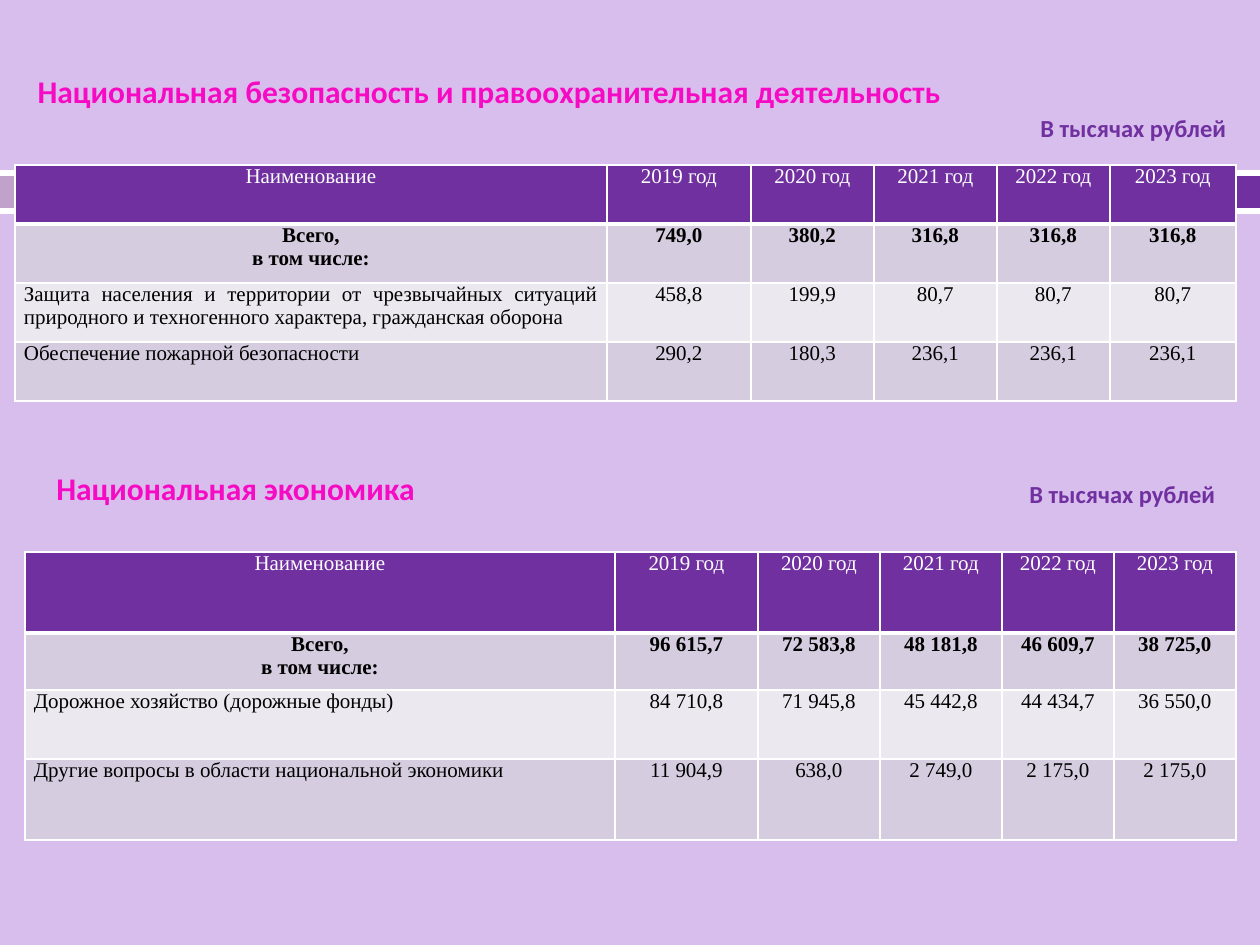
from lxml.etree import SubElement
from pptx import Presentation
from pptx.dml.color import RGBColor
from pptx.enum.shapes import MSO_SHAPE
from pptx.enum.text import MSO_ANCHOR, PP_ALIGN
from pptx.oxml.ns import qn
from pptx.util import Pt

SCALE = 914400 / 126
COLORS = {
    "background": "D8BEEC", "white": "FFFFFF", "black": "000000", "lilac": "C0A2CA",
    "purple": "7030A0", "pink": "F60AC3", "dark_band": "D5CDDF", "light_band": "EBE8F0",
}
BANDS = [
    ((0, 170, 1260, 44), "white"),
    ((0, 176, 73, 32), "lilac"),
    ((82, 176, 1178, 32), "purple"),
]
HEADER = ["Наименование"] + [f"{year} год" for year in range(2019, 2024)]
TOTAL = "Всего,\nв том числе:"
SECURITY = [
    HEADER,
    [TOTAL, "749,0", "380,2", "316,8", "316,8", "316,8"],
    ["Защита населения и территории от чрезвычайных ситуаций природного и техногенного "
     "характера, гражданская оборона", "458,8", "199,9", "80,7", "80,7", "80,7"],
    ["Обеспечение пожарной безопасности", "290,2", "180,3", "236,1", "236,1", "236,1"],
]
ECONOMY = [
    HEADER,
    [TOTAL, "96 615,7", "72 583,8", "48 181,8", "46 609,7", "38 725,0"],
    ["Дорожное хозяйство (дорожные фонды)",
     "84 710,8", "71 945,8", "45 442,8", "44 434,7", "36 550,0"],
    ["Другие вопросы в области национальной экономики",
     "11 904,9", "638,0", "2 749,0", "2 175,0", "2 175,0"],
]
TABLES = [
    (SECURITY, (15, 165), [592, 144, 123, 123, 113, 126], [59, 59, 59, 59]),
    (ECONOMY, (25, 552), [590, 143, 122, 122, 112, 122], [81, 57, 69, 81]),
]
TITLE = ("Национальная безопасность и правоохранительная деятельность", (25, 66, 936, 50))
SUBTITLE = ("Национальная экономика", (44, 463, 388, 50))
UNITS = "В тысячах рублей"
UNIT_BOXES = [(1017, 473, 228, 59), (1028, 107, 228, 59)]
HEADING_FONT = {"name": "Calibri", "size": Pt(18), "bold": True}
UNIT_FONT = {"name": "Calibri", "size": Pt(14), "bold": True}
TABLE_FONT = {"name": "Times New Roman", "size": Pt(12)}
CELL_FORMAT = {"margin_left": 9, "margin_right": 9, "margin_top": 0, "margin_bottom": 0}


def px(value):
    return int(value * SCALE)


def rgb(name):
    return RGBColor.from_string(COLORS[name])


def set_font(paragraph, values, color):
    font = paragraph.runs[0].font
    for name, value in values.items():
        setattr(font, name, value)
    font.color.rgb = rgb(color)


def write_text(shape, text, values, color, wrap):
    frame = shape.text_frame
    frame.text = text
    frame.word_wrap = wrap
    frame.vertical_anchor = MSO_ANCHOR.TOP
    frame.paragraphs[0].alignment = PP_ALIGN.LEFT
    set_font(frame.paragraphs[0], values, color)


def set_borders(cell, widths):
    properties = cell._tc.get_or_add_tcPr()
    for position, (side, width) in enumerate(widths.items()):
        line = properties.makeelement(qn(f"a:ln{side}"), {"w": str(Pt(width))})
        fill = SubElement(line, qn("a:solidFill"))
        SubElement(fill, qn("a:srgbClr"), val=COLORS["white"])
        properties.insert(position, line)


def fill_cell(cell, text, row, column):
    for name, value in CELL_FORMAT.items():
        setattr(cell, name, px(value))
    cell.vertical_anchor = MSO_ANCHOR.TOP
    cell.fill.solid()
    cell.fill.fore_color.rgb = rgb(["purple", "dark_band", "light_band", "dark_band"][row])
    set_borders(cell, {"L": 1, "R": 1, "T": 1, "B": 1 if row else 3})
    cell.text = text
    for paragraph in cell.text_frame.paragraphs:
        paragraph.alignment = PP_ALIGN.JUSTIFY if row > 1 and column == 0 else PP_ALIGN.CENTER
        set_font(paragraph, TABLE_FONT | {"bold": row == 1}, "black" if row else "white")


def add_budget_table(slide, rows, origin, widths, heights):
    box = (*origin, sum(widths), sum(heights))
    table = slide.shapes.add_table(len(rows), len(widths), *map(px, box)).table
    table.first_row = table.horz_banding = False
    for column, width in zip(table.columns, widths):
        column.width = px(width)
    for row, height in zip(table.rows, heights):
        row.height = px(height)
    for row, texts in enumerate(rows):
        for column, text in enumerate(texts):
            fill_cell(table.cell(row, column), text, row, column)


def main():
    presentation = Presentation()
    presentation.slide_width, presentation.slide_height = px(1260), px(945)
    slide = presentation.slides.add_slide(presentation.slide_layouts[5])
    slide.background.fill.solid()
    slide.background.fill.fore_color.rgb = rgb("background")

    for box, color in BANDS:
        shape = slide.shapes.add_shape(MSO_SHAPE.RECTANGLE, *map(px, box))
        shape.shadow.inherit = False
        shape.fill.solid()
        shape.fill.fore_color.rgb = rgb(color)
        shape.line.fill.background()

    for table in TABLES:
        add_budget_table(slide, *table)

    title = slide.shapes.title
    text, box = TITLE
    title.left, title.top, title.width, title.height = map(px, box)
    write_text(title, text, HEADING_FONT, "pink", False)

    text, box = SUBTITLE
    write_text(slide.shapes.add_textbox(*map(px, box)), text, HEADING_FONT, "pink", False)
    for box in UNIT_BOXES:
        write_text(slide.shapes.add_textbox(*map(px, box)), UNITS, UNIT_FONT, "purple", True)

    presentation.save("out.pptx")


if __name__ == "__main__":
    main()
